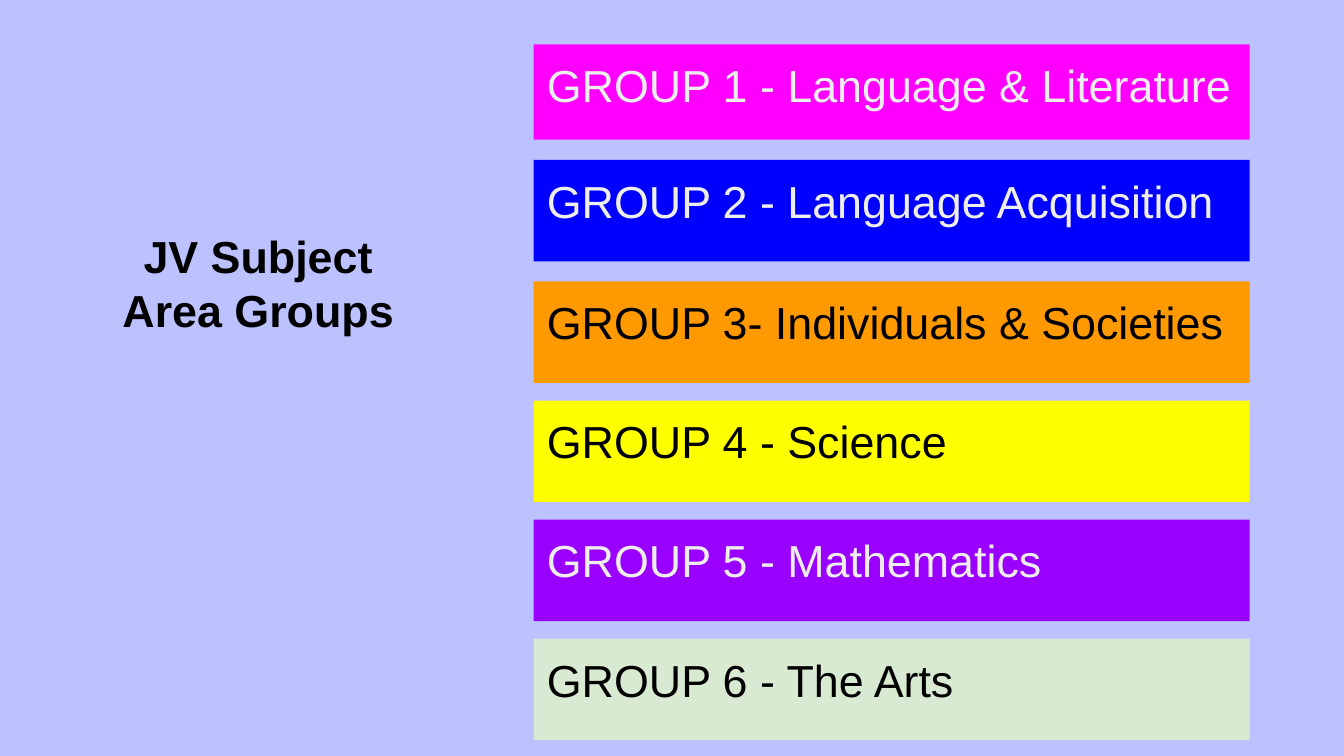
from dataclasses import dataclass

from pptx import Presentation
from pptx.dml.color import RGBColor
from pptx.enum.shapes import MSO_SHAPE
from pptx.enum.text import MSO_ANCHOR, MSO_AUTO_SIZE, PP_ALIGN
from pptx.util import Pt


@dataclass(frozen=True)
class Theme:
    back: str = "BCC1FF"
    dark: str = "000000"
    light: str = "EEEEEE"
    face: str = "Arial"
    size: float = 24
    inset: float = 7.2


THEME = Theme()

GROUPS = [
    ("GROUP 1 - Language & Literature", "FF00FF", THEME.light, 51, 10.8),
    ("GROUP 2 - Language Acquisition", "0000FF", THEME.light, 54.4, 10.8),
    ("GROUP 3- Individuals & Societies", "FF9900", THEME.dark, 54.4, 9.4),
    ("GROUP 4 - Science", "FFFF00", THEME.dark, 54.4, 9.4),
    ("GROUP 5 - Mathematics", "9900FF", THEME.light, 54.4, 9.4),
    ("GROUP 6 - The Arts", "D9EAD3", THEME.dark, 54.4, 0),
]


def apply(item, values):
    for name, value in values.items():
        setattr(item, name, value)


def paint(fill, color):
    fill.solid()
    fill.fore_color.rgb = RGBColor.from_string(color)


def write(shape, text, color, align, bold=False):
    frame = shape.text_frame
    frame.text = text
    sides = ("left", "top", "right", "bottom")
    apply(frame, {f"margin_{side}": Pt(THEME.inset) for side in sides})
    apply(frame, {"word_wrap": True, "auto_size": MSO_AUTO_SIZE.NONE,
                  "vertical_anchor": MSO_ANCHOR.TOP})
    line = frame.paragraphs[0]
    line.alignment = align
    font = line.runs[0].font
    apply(font, {"name": THEME.face, "size": Pt(THEME.size), "bold": bold})
    font.color.rgb = RGBColor.from_string(color)


def add_title(slide, box):
    title = slide.shapes.title
    apply(title, dict(zip(("left", "top", "width", "height"), map(Pt, box))))
    write(title, "JV Subject Area Groups", THEME.dark, PP_ALIGN.CENTER, True)


def add_bars(slide, left, top, width):
    for text, fill, color, height, gap in GROUPS:
        bar = slide.shapes.add_shape(
            MSO_SHAPE.RECTANGLE, Pt(left), Pt(top), Pt(width), Pt(height))
        bar.shadow.inherit = False
        paint(bar.fill, fill)
        bar.line.fill.background()
        write(bar, text, color, PP_ALIGN.LEFT)
        top += height + gap


def main():
    deck = Presentation()
    apply(deck, {"slide_width": Pt(720), "slide_height": Pt(405)})
    slide = deck.slides.add_slide(deck.slide_layouts[5])
    paint(slide.background.fill, THEME.back)
    add_title(slide, (53.3, 115.2, 170, 105))
    add_bars(slide, 285.9, 23.8, 383.6)
    deck.save("out.pptx")


if __name__ == "__main__":
    main()
